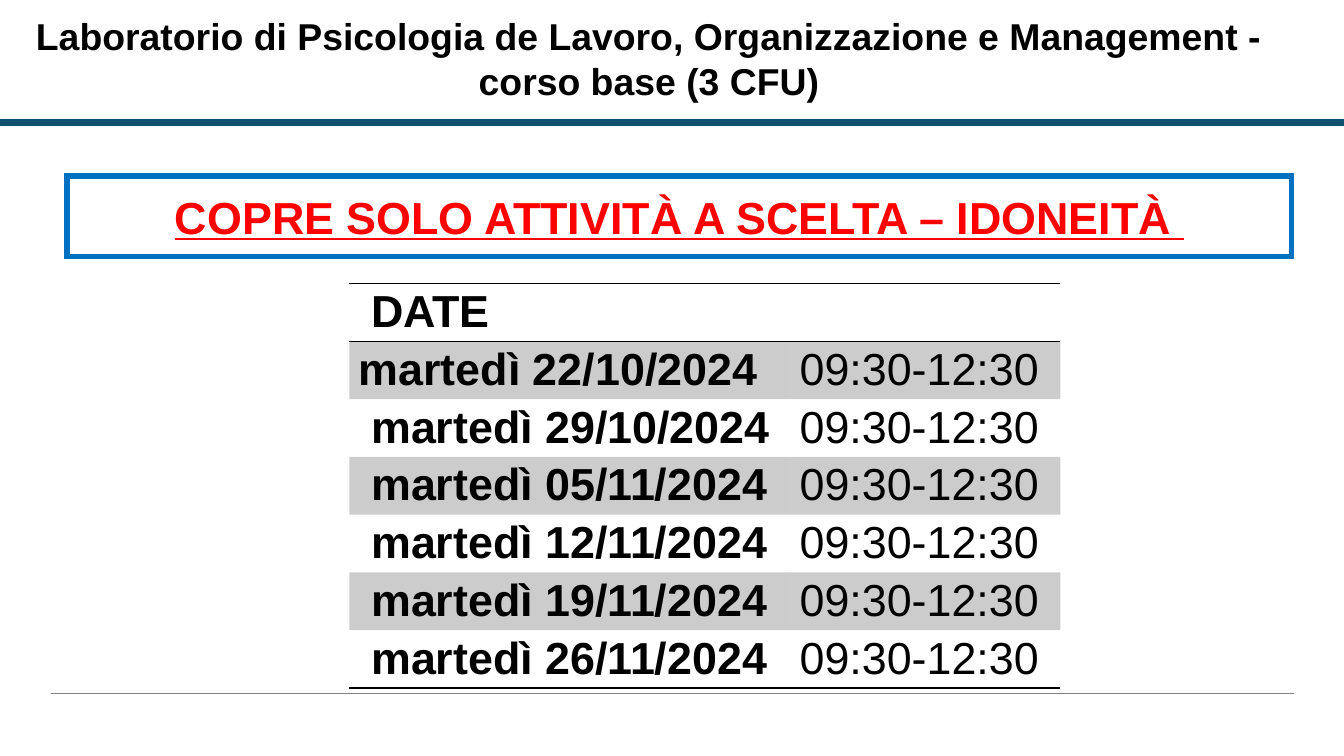
from lxml.etree import SubElement
from pptx import Presentation
from pptx.dml.color import RGBColor
from pptx.enum.shapes import MSO_CONNECTOR, MSO_SHAPE
from pptx.enum.text import MSO_ANCHOR, PP_ALIGN
from pptx.oxml import parse_xml
from pptx.oxml.ns import nsdecls, qn
from pptx.util import Inches, Pt

COLORS = {
    "text": "000000",
    "alert": "FF0000",
    "frame": "0070C0",
    "header_rule": "0E5070",
    "footer_rule": "818285",
}
NO_STYLE = "{2D5ABB26-0587-4C30-8999-92F81FD0307C}"
TIME = "09:30-12:30"
DATES = [
    "martedì 22/10/2024",
    " martedì 29/10/2024",
    " martedì 05/11/2024",
    " martedì 12/11/2024",
    " martedì 19/11/2024",
    " martedì 26/11/2024",
]


def rgb(name):
    return RGBColor.from_string(COLORS[name])


def write(frame, text, size=24, color="text", bold=True, underline=None,
          align=None, line_spacing=None, space_after=None):
    paragraph = frame.paragraphs[0]
    paragraph.alignment = align
    paragraph.line_spacing = line_spacing
    paragraph.space_after = space_after
    run = paragraph.add_run()
    run.text = text
    font = run.font
    font.name, font.size = "Arial", Pt(size)
    font.bold, font.underline = bold, underline
    font.color.rgb = rgb(color)


def add_rule(slide, left, right, y, color, width):
    rule = slide.shapes.add_connector(
        MSO_CONNECTOR.STRAIGHT, Inches(left), Inches(y), Inches(right), Inches(y))
    rule.line.color.rgb = rgb(color)
    rule.line.width = Pt(width)
    SubElement(rule._element.spPr, qn("a:effectLst"))


def add_title(slide, text):
    title = slide.shapes.add_textbox(Inches(0.05), Inches(0.05), Inches(9.56), Inches(0.77))
    title.text_frame.word_wrap = True
    write(title.text_frame, text, size=20, align=PP_ALIGN.CENTER)


def add_banner(slide, text):
    banner = slide.shapes.add_shape(
        MSO_SHAPE.RECTANGLE, Inches(0.5), Inches(1.31), Inches(9.11), Inches(0.6))
    banner.shadow.inherit = False
    banner.fill.background()
    banner.line.color.rgb = rgb("frame")
    banner.line.width = Pt(3)
    SubElement(banner._element.spPr.find(qn("a:ln")), qn("a:miter"), lim="800000")
    banner.text_frame.vertical_anchor = MSO_ANCHOR.MIDDLE
    write(banner.text_frame, text, color="alert", underline=True, align=PP_ALIGN.CENTER)


def shade(cell, percent):
    cell.fill.solid()
    cell.fill.fore_color.rgb = rgb("text")
    color = cell._tc.tcPr.find(qn("a:solidFill"))[0]
    SubElement(color, qn("a:alpha"), val=str(percent * 1000))


def add_borders(cell, sides):
    for position, side in enumerate(sides):
        border = parse_xml(
            f'<a:ln{side} {nsdecls("a")} w="{Pt(1)}"><a:solidFill>'
            f'<a:srgbClr val="{COLORS["text"]}"/></a:solidFill></a:ln{side}>')
        cell._tc.get_or_add_tcPr().insert(position, border)


def add_schedule(slide, rows):
    widths, row_height = [3.28, 2.01], 0.43
    table = slide.shapes.add_table(
        len(rows), len(widths), Inches(2.6), Inches(2.11),
        Inches(sum(widths)), Inches(row_height * len(rows))).table
    table.first_row = table.horz_banding = False
    table._tbl.tblPr.find(qn("a:tableStyleId")).text = NO_STYLE
    for column, width in zip(table.columns, widths):
        column.width = Inches(width)
    borders = {0: "TB", len(rows) - 1: "B"}
    for r, row in enumerate(rows):
        table.rows[r].height = Inches(row_height)
        for c, text in enumerate(row):
            cell = table.cell(r, c)
            cell.margin_left = cell.margin_right = Inches(0.07)
            cell.margin_top = cell.margin_bottom = 0
            if r % 2:
                shade(cell, 20)
            else:
                cell.fill.background()
            add_borders(cell, borders.get(r, ""))
            if text:
                write(cell.text_frame, text, bold=c == 0,
                      line_spacing=1.07, space_after=Pt(8))


def main():
    deck = Presentation()
    deck.slide_width = Inches(10)
    deck.slide_height = deck.slide_width * 9 // 16
    slide = deck.slides.add_slide(deck.slide_layouts[6])
    add_rule(slide, 0.38, 9.63, 5.16, "footer_rule", 0.5)
    add_rule(slide, 0, 10, 0.91, "header_rule", 3.5)
    add_title(slide, "Laboratorio di Psicologia de Lavoro, Organizzazione e "
                     "Management - corso base (3 CFU)")
    add_schedule(slide, [(" DATE", "")] + [(date, TIME) for date in DATES])
    add_banner(slide, "COPRE SOLO ATTIVITÀ A SCELTA – IDONEITÀ ")
    deck.save("out.pptx")


if __name__ == "__main__":
    main()
